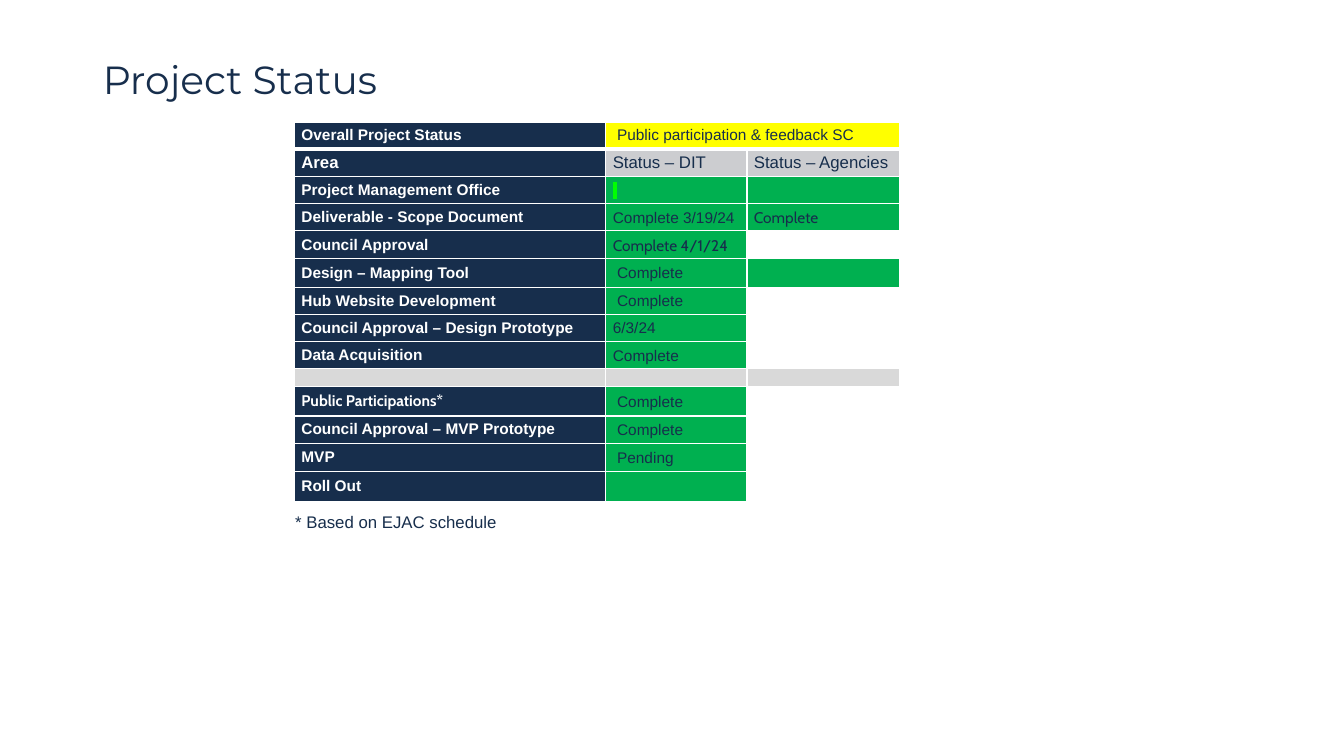
import dataclasses
import typing

import lxml.etree
import pptx
import pptx.dml.color
import pptx.enum.text
import pptx.oxml.ns
import pptx.util

GRID_COLS = 133.33
GRID_ROWS = 75
COLORS = {
    "navy": "172E4C",
    "white": "FFFFFF",
    "green": "00B050",
    "marker": "00FF00",
    "yellow": "FFFF00",
    "header": "CCCDD0",
    "divider": "D9D9D9",
}
MIDDLE = pptx.enum.text.MSO_ANCHOR.MIDDLE
TOP = pptx.enum.text.MSO_ANCHOR.TOP


@dataclasses.dataclass
class Cell:
    text: str = ""
    fill: str = "green"
    color: str = "navy"
    size: float = 11
    font: str = "Arial"
    bold: bool = False
    indent: float = 0.7
    spacing: float = 1.07
    highlight: typing.Optional[str] = None


@dataclasses.dataclass
class Row:
    height: float
    cells: typing.List[Cell]


def label(text: str, size: float = 11, font: str = "Arial") -> Cell:
    return Cell(text, "navy", "white", size, font, bold=True, spacing=1)


def heading(text: str) -> Cell:
    return Cell(text, "header", size=12, spacing=1)


def indented(text: str) -> Cell:
    return Cell(text, indent=1.12)


BLANK = Cell(fill="white")
DIVIDER = Cell(fill="divider")
COLUMN_WIDTHS = [30.9, 14, 15.2]
STATUS_ROWS = [
    Row(2.7, [label("Overall Project Status"),
              Cell("Public participation & feedback SC", "yellow", indent=1.12, spacing=1),
              Cell(fill="yellow")]),
    Row(2.7, [label("Area", 12), heading("Status – DIT"), heading("Status – Agencies")]),
    Row(2.7, [label("Project Management Office"), Cell(" ", highlight="marker"), Cell()]),
    Row(2.7, [label("Deliverable - Scope Document"), Cell("Complete 3/19/24"),
              Cell("Complete", font="Cabin")]),
    Row(2.8, [label("Council Approval"), Cell("Complete 4/1/24", font="Cabin"), BLANK]),
    Row(2.8, [label("Design – Mapping Tool"), indented("Complete"), Cell()]),
    Row(2.7, [label("Hub Website Development"), indented("Complete"), BLANK]),
    Row(2.7, [label("Council Approval – Design Prototype"), Cell("6/3/24"), BLANK]),
    Row(2.7, [label("Data Acquisition"), Cell("Complete"), BLANK]),
    Row(1.8, [DIVIDER, DIVIDER, DIVIDER]),
    Row(2.9, [label("Public Participations*", font="Cabin"), indented("Complete"), BLANK]),
    Row(2.7, [label("Council Approval – MVP Prototype"), indented("Complete"), BLANK]),
    Row(2.8, [label("MVP"), indented("Pending"), BLANK]),
    Row(3, [label("Roll Out"), Cell(), BLANK]),
]

prs = pptx.Presentation()
prs.slide_width = pptx.util.Inches(13.33)
prs.slide_height = pptx.util.Inches(7.5)


def col(n: float) -> int:
    return round(prs.slide_width * n / GRID_COLS)


def row(n: float) -> int:
    return round(prs.slide_height * n / GRID_ROWS)


def rgb(name: str) -> pptx.dml.color.RGBColor:
    return pptx.dml.color.RGBColor.from_string(COLORS[name])


def add_xml(parent: typing.Any, tag: str, **attrs: str) -> typing.Any:
    return lxml.etree.SubElement(parent, pptx.oxml.ns.qn(tag), attrs)


def write_text(tf: typing.Any, text: str, *, size: float, font: str = "Arial",
               color: str = "navy", bold: bool = False, spacing: float = 1,
               highlight: typing.Optional[str] = None) -> None:
    p = tf.paragraphs[0]
    p.alignment = pptx.enum.text.PP_ALIGN.LEFT
    p.line_spacing = spacing
    p.space_before = pptx.util.Pt(0)
    r = p.add_run()
    r.text = text
    r.font.size = pptx.util.Pt(size)
    r.font.bold = bold
    r.font.color.rgb = rgb(color)
    if highlight:
        mark = add_xml(r.font._element, "a:highlight")
        add_xml(mark, "a:srgbClr", val=COLORS[highlight])
    r.font.name = font


def set_borders(cell: typing.Any, bottom: float) -> None:
    tc_pr = cell._tc.get_or_add_tcPr()
    widths = {"a:lnL": 1, "a:lnR": 1, "a:lnT": 1, "a:lnB": bottom}
    for i, (tag, width) in enumerate(widths.items()):
        ln = add_xml(tc_pr, tag, w=str(pptx.util.Pt(width)))
        add_xml(add_xml(ln, "a:solidFill"), "a:srgbClr", val=COLORS["white"])
        tc_pr.insert(i, ln)


def fill_cell(cell: typing.Any, item: Cell, bottom: float) -> None:
    cell.fill.solid()
    cell.fill.fore_color.rgb = rgb(item.fill)
    set_borders(cell, bottom)
    cell.vertical_anchor = MIDDLE
    cell.margin_left, cell.margin_right = col(item.indent), col(0.7)
    cell.margin_top = cell.margin_bottom = 0
    if item.text:
        write_text(cell.text_frame, item.text, size=item.size, font=item.font,
                   color=item.color, bold=item.bold, spacing=item.spacing,
                   highlight=item.highlight)
    else:
        add_xml(cell.text_frame.paragraphs[0]._p, "a:endParaRPr", sz="800")


def add_title(s: typing.Any) -> None:
    sp = s.shapes.title
    sp.left, sp.top, sp.width, sp.height = col(9.2), row(5.5), col(115), row(6.1)
    tf = sp.text_frame
    tf.vertical_anchor = TOP
    tf.auto_size = pptx.enum.text.MSO_AUTO_SIZE.NONE
    write_text(tf, "Project Status", size=28, font="Montserrat", spacing=0.9)


def add_status_table(s: typing.Any) -> None:
    table = s.shapes.add_table(len(STATUS_ROWS), len(COLUMN_WIDTHS), col(29.2), row(12.1),
                               col(sum(COLUMN_WIDTHS)),
                               row(sum(item.height for item in STATUS_ROWS))).table
    table.first_row = table.horz_banding = False
    for column, width in zip(table.columns, COLUMN_WIDTHS):
        column.width = col(width)
    for i, item in enumerate(STATUS_ROWS):
        table.rows[i].height = row(item.height)
        for j, content in enumerate(item.cells):
            fill_cell(table.cell(i, j), content, bottom=1 if i else 3)
    table.cell(0, 1).merge(table.cell(0, 2))


def add_footnote(s: typing.Any) -> None:
    tf = s.shapes.add_textbox(col(28.3), row(50.3), col(22.2), row(3)).text_frame
    tf.word_wrap = False
    tf.auto_size = pptx.enum.text.MSO_AUTO_SIZE.SHAPE_TO_FIT_TEXT
    write_text(tf, "* Based on EJAC schedule", size=12)


def main() -> None:
    s = prs.slides.add_slide(prs.slide_layouts[5])
    add_title(s)
    add_status_table(s)
    add_footnote(s)
    prs.save("out.pptx")


if __name__ == "__main__":
    main()
